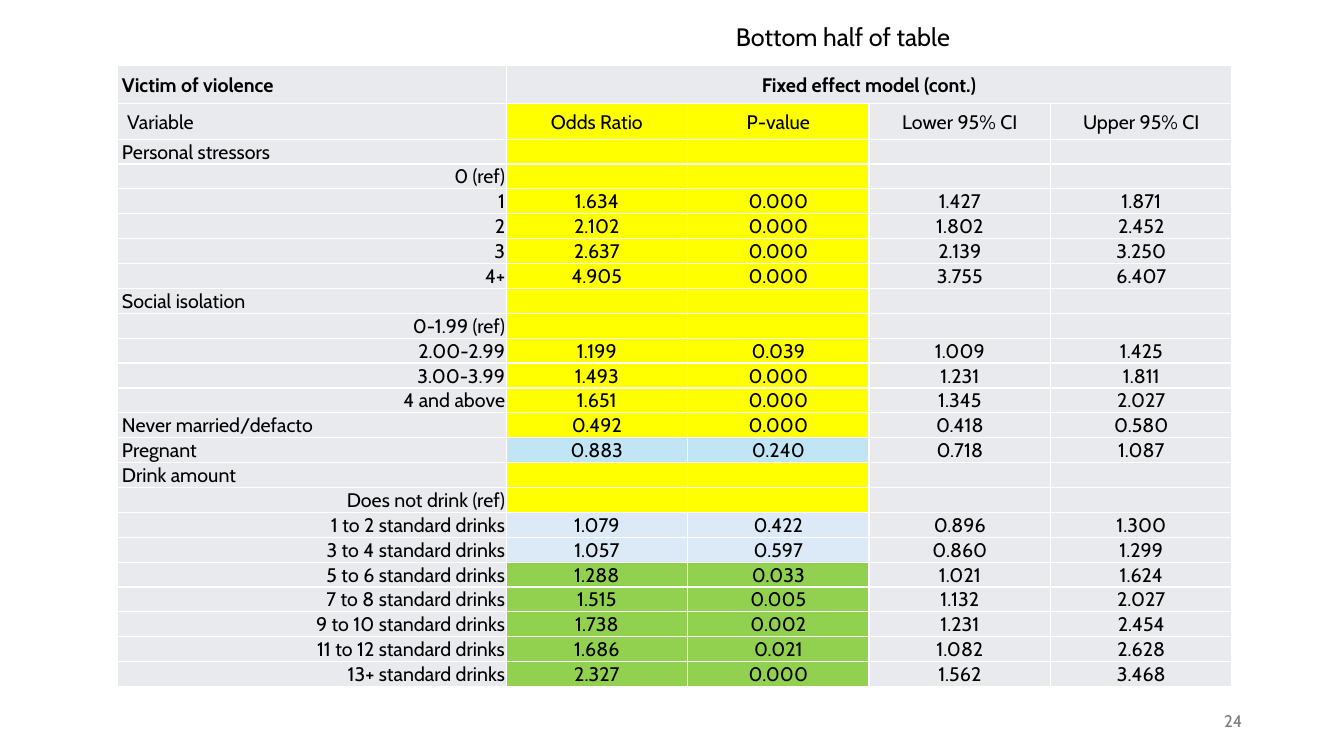
from lxml import etree
from pptx import Presentation
from pptx.dml.color import RGBColor
from pptx.enum.text import MSO_ANCHOR, MSO_AUTO_SIZE, PP_ALIGN
from pptx.oxml.ns import qn
from pptx.util import Inches, Pt

LEFT, CENTER, RIGHT = PP_ALIGN.LEFT, PP_ALIGN.CENTER, PP_ALIGN.RIGHT
TOP, MIDDLE, BOTTOM = MSO_ANCHOR.TOP, MSO_ANCHOR.MIDDLE, MSO_ANCHOR.BOTTOM
NO_FIT = MSO_AUTO_SIZE.NONE

FONT = "Cabin"
COLORS = {
    "text": "000000", "number": "797979", "border": "FFFFFF",
    "plain": "E8EAED", "yellow": "FFFF00", "sky": "C1E5F5",
    "pale": "DCEAF7", "green": "92D050",
}
COL_WIDTHS = [3.86, 1.8, 1.8, 1.8, 1.8]
HEADER_HEIGHTS = [0.38, 0.35]
ROW_HEIGHT = 0.23
HEADINGS = ["Variable", "Odds Ratio", "P-value", "Lower 95% CI", "Upper 95% CI"]

# Label, label alignment, highlight, then odds ratio, p-value, lower and upper CI
ROWS = [
    ("Personal stressors", LEFT, "yellow", ""),
    ("0 (ref)", RIGHT, "yellow", ""),
    ("1", RIGHT, "yellow", "1.634 0.000 1.427 1.871"),
    ("2", RIGHT, "yellow", "2.102 0.000 1.802 2.452"),
    ("3", RIGHT, "yellow", "2.637 0.000 2.139 3.250"),
    ("4+", RIGHT, "yellow", "4.905 0.000 3.755 6.407"),
    ("Social isolation", LEFT, "yellow", ""),
    ("0-1.99 (ref)", RIGHT, "yellow", ""),
    ("2.00-2.99", RIGHT, "yellow", "1.199 0.039 1.009 1.425"),
    ("3.00-3.99", RIGHT, "yellow", "1.493 0.000 1.231 1.811"),
    ("4 and above", RIGHT, "yellow", "1.651 0.000 1.345 2.027"),
    ("Never married/defacto", LEFT, "yellow", "0.492 0.000 0.418 0.580"),
    ("Pregnant", LEFT, "sky", "0.883 0.240 0.718 1.087"),
    ("Drink amount", LEFT, "yellow", ""),
    ("Does not drink (ref)", RIGHT, "yellow", ""),
    ("1 to 2 standard drinks", RIGHT, "pale", "1.079 0.422 0.896 1.300"),
    ("3 to 4 standard drinks", RIGHT, "pale", "1.057 0.597 0.860 1.299"),
    ("5 to 6 standard drinks", RIGHT, "green", "1.288 0.033 1.021 1.624"),
    ("7 to 8 standard drinks", RIGHT, "green", "1.515 0.005 1.132 2.027"),
    ("9 to 10 standard drinks", RIGHT, "green", "1.738 0.002 1.231 2.454"),
    ("11 to 12 standard drinks", RIGHT, "green", "1.686 0.021 1.082 2.628"),
    ("13+ standard drinks", RIGHT, "green", "2.327 0.000 1.562 3.468"),
]


def write(tf, text, size=14, color="text", bold=False, align=LEFT):
    p = tf.paragraphs[0]
    p.alignment = align
    if not text:
        # An empty cell still needs a font size to keep its row low
        p._p.get_or_add_endParaRPr().set("sz", str(size * 100))
        return
    r = p.add_run()
    r.text = text
    r.font.name = FONT
    r.font.size = Pt(size)
    r.font.bold = bold
    r.font.color.rgb = RGBColor.from_string(COLORS[color])


def add_borders(cell):
    tc_pr = cell._tc.get_or_add_tcPr()
    for i, side in enumerate(("a:lnL", "a:lnR", "a:lnT", "a:lnB")):
        ln = etree.Element(qn(side), w=str(Pt(1)))
        fill = etree.SubElement(ln, qn("a:solidFill"))
        etree.SubElement(fill, qn("a:srgbClr"), val=COLORS["border"])
        tc_pr.insert(i, ln)


def fill_cell(cell, text, fill="plain", anchor=MIDDLE, indent=0.01, **fmt):
    cell.margin_left = Inches(indent)
    cell.margin_right = cell.margin_top = Inches(0.01)
    cell.margin_bottom = 0
    cell.vertical_anchor = anchor
    cell.fill.solid()
    cell.fill.fore_color.rgb = RGBColor.from_string(COLORS[fill])
    add_borders(cell)
    write(cell.text_frame, text, **fmt)


def add_title(s, x, y, w, h):
    title = s.shapes.title
    title.left, title.top, title.width, title.height = map(Inches, (x, y, w, h))
    tf = title.text_frame
    tf.auto_size = NO_FIT
    tf.vertical_anchor = TOP
    write(tf, "Bottom half of table", size=18, align=CENTER)


def add_results(s, x, y, w, h):
    frame = s.shapes.add_table(len(ROWS) + 2, len(COL_WIDTHS), *map(Inches, (x, y, w, h)))
    table = frame.table
    for column, width in zip(table.columns, COL_WIDTHS):
        column.width = Inches(width)
    for row, height in zip(table.rows, HEADER_HEIGHTS + [ROW_HEIGHT] * len(ROWS)):
        row.height = Inches(height)

    # Header rows
    table.cell(0, 1).merge(table.cell(0, 4))
    top = ["Victim of violence", "Fixed effect model (cont.)", "", "", ""]
    for c, (group, heading) in enumerate(zip(top, HEADINGS)):
        align = CENTER if c else LEFT
        fill_cell(table.cell(0, c), group, bold=True, align=align,
                  indent=0.01 if c else 0.05)
        fill_cell(table.cell(1, c), heading, "yellow" if c in (1, 2) else "plain",
                  align=align, indent=0.01 if c else 0.1)

    # Body rows
    for i, (label, align, highlight, values) in enumerate(ROWS, 2):
        fill_cell(table.cell(i, 0), label, anchor=BOTTOM if i > 3 else MIDDLE,
                  indent=0.05 if align == LEFT else 0.01, align=align)
        for c, value in enumerate(values.split() or [""] * 4, 1):
            fill_cell(table.cell(i, c), value, highlight if c < 3 else "plain",
                      align=CENTER)


def add_page_number(s, x, y, w, h):
    tf = s.shapes.add_textbox(*map(Inches, (x, y, w, h))).text_frame
    tf.word_wrap = True
    tf.vertical_anchor = MIDDLE
    write(tf, "24", size=12, color="number", align=RIGHT)


def main():
    prs = Presentation()
    prs.slide_width, prs.slide_height = Inches(13.33), Inches(7.5)
    s = prs.slides.add_slide(prs.slide_layouts[5])
    add_results(s, 1.16, 0.65, 11.06, 6.07)
    add_page_number(s, 9.42, 6.95, 3, 0.4)
    add_title(s, 6.69, 0.16, 3.34, 0.4)
    prs.save("out.pptx")


if __name__ == "__main__":
    main()
